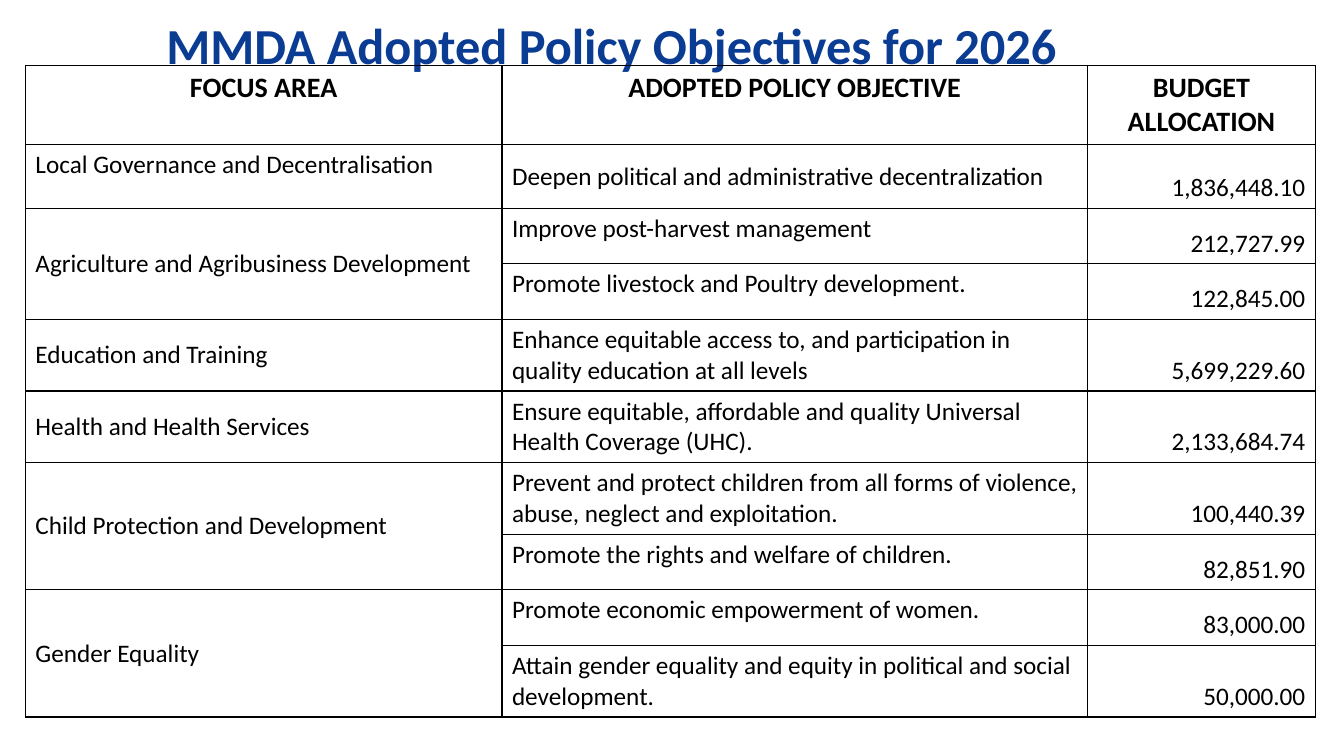
from dataclasses import dataclass

from lxml import etree
from pptx import Presentation
from pptx.dml.color import RGBColor
from pptx.enum import text
from pptx.oxml import ns
from pptx.util import Cm, Pt

LEFT, CENTER, RIGHT = text.PP_ALIGN.LEFT, text.PP_ALIGN.CENTER, text.PP_ALIGN.RIGHT
TOP, MIDDLE, BOTTOM = (text.MSO_ANCHOR.TOP, text.MSO_ANCHOR.MIDDLE,
                       text.MSO_ANCHOR.BOTTOM)


@dataclass(frozen=True)
class Theme:
    font: str = "Calibri"
    title_color: str = "093C92"
    ink: str = "000000"
    title_size: int = 36
    header_size: int = 20
    body_size: int = 18
    border_width: int = 1


THEME = Theme()
HEADERS = ["FOCUS AREA", "ADOPTED POLICY OBJECTIVE", "BUDGET ALLOCATION"]
COLUMN_WIDTHS = [12.01, 14.76, 5.74]
HEADER_HEIGHT = 1.99

# Focus area, its anchor, and objectives as (wording, anchor, budget, row height)
FOCUS_AREAS = [
    ("Local Governance and Decentralisation", TOP, [
        ("Deepen political and administrative decentralization", MIDDLE,
         "1,836,448.10", 1.61)]),
    ("Agriculture and Agribusiness Development", MIDDLE, [
        ("Improve post-harvest management", TOP, "212,727.99", 1.4),
        ("Promote livestock and Poultry development.", TOP, "122,845.00", 1.4)]),
    ("Education and Training", MIDDLE, [
        ("Enhance equitable access to, and participation in quality education "
         "at all levels", TOP, "5,699,229.60", 1.8)]),
    ("Health and Health Services", MIDDLE, [
        ("Ensure equitable, affordable and quality Universal\v"
         "Health Coverage (UHC).", MIDDLE, "2,133,684.74", 1.8)]),
    ("Child Protection and Development", MIDDLE, [
        ("Prevent and protect children from all forms of violence, abuse, "
         "neglect and exploitation.", TOP, "100,440.39", 1.8),
        ("Promote the rights and welfare of children.", TOP, "82,851.90", 1.4)]),
    ("Gender Equality", MIDDLE, [
        ("Promote economic empowerment of women.", TOP, "83,000.00", 1.4),
        ("Attain gender equality and equity in political and social "
         "development.", TOP, "50,000.00", 1.8)]),
]


def style_paragraph(p, size, color, bold=False, align=LEFT):
    p.alignment = align
    p.font.name = THEME.font
    p.font.size = Pt(size)
    p.font.bold = bold
    p.font.color.rgb = RGBColor.from_string(color)


def frame_cell(cell):
    """Clear the fill and draw all four borders."""
    cell.fill.background()
    props = cell._tc.get_or_add_tcPr()
    for i, side in enumerate(("a:lnL", "a:lnR", "a:lnT", "a:lnB")):
        line = etree.Element(ns.qn(side), w=str(Pt(THEME.border_width)))
        fill = etree.SubElement(line, ns.qn("a:solidFill"))
        etree.SubElement(fill, ns.qn("a:srgbClr"), val=THEME.ink)
        props.insert(i, line)


def write_cell(cell, words, size=THEME.body_size, bold=False, align=LEFT, anchor=TOP):
    p = cell.text_frame.paragraphs[0]
    p.text = words
    style_paragraph(p, size, THEME.ink, bold, align)
    cell.vertical_anchor = anchor


def add_title(s, words):
    title = s.shapes.title
    title.left, title.top, title.width, title.height = (
        Cm(3.94), Cm(0), Cm(25.98), Cm(2.21))
    tf = title.text_frame
    tf.text = words
    tf.word_wrap = True
    tf.vertical_anchor = MIDDLE
    tf.margin_left = tf.margin_right = tf.margin_top = tf.margin_bottom = Cm(0.25)
    style_paragraph(tf.paragraphs[0], THEME.title_size, THEME.title_color, bold=True)


def add_budget_table(s):
    heights = [HEADER_HEIGHT] + [o[3] for _, _, objectives in FOCUS_AREAS
                                 for o in objectives]
    table = s.shapes.add_table(len(heights), len(HEADERS), Cm(0.64), Cm(1.65),
                               Cm(sum(COLUMN_WIDTHS)), Cm(sum(heights))).table
    table.first_row = table.horz_banding = False
    for column, width in zip(table.columns, COLUMN_WIDTHS):
        column.width = Cm(width)
    for row, height in zip(table.rows, heights):
        row.height = Cm(height)
    for cell in table.iter_cells():
        frame_cell(cell)

    for i, header in enumerate(HEADERS):
        write_cell(table.cell(0, i), header, THEME.header_size, True, CENTER)
    row = 1
    for area, area_anchor, objectives in FOCUS_AREAS:
        area_cell = table.cell(row, 0)
        if len(objectives) > 1:
            area_cell.merge(table.cell(row + len(objectives) - 1, 0))
        write_cell(area_cell, area, anchor=area_anchor)
        for objective, anchor, budget, _ in objectives:
            write_cell(table.cell(row, 1), objective, anchor=anchor)
            write_cell(table.cell(row, 2), budget, align=RIGHT, anchor=BOTTOM)
            row += 1


def main():
    prs = Presentation()
    prs.slide_width, prs.slide_height = Cm(33.87), Cm(19.05)
    s = prs.slides.add_slide(prs.slide_layouts[5])
    add_title(s, "MMDA Adopted Policy Objectives for 2026")
    add_budget_table(s)
    prs.save("out.pptx")


if __name__ == "__main__":
    main()
